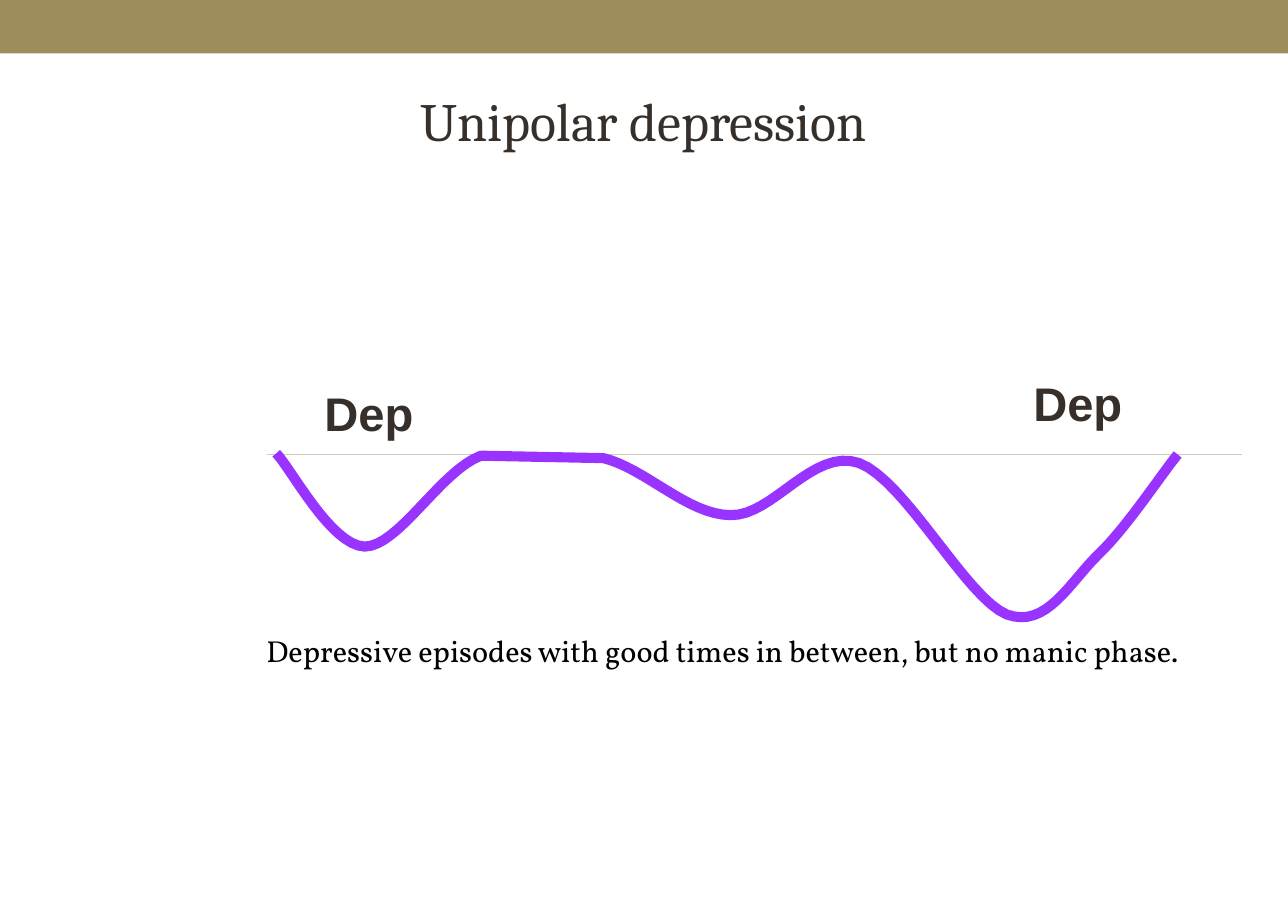
from pptx import Presentation
from pptx.dml.color import RGBColor
from pptx.enum.shapes import MSO_CONNECTOR, MSO_SHAPE
from pptx.enum.text import MSO_ANCHOR, PP_ALIGN
from pptx.oxml.ns import qn
from pptx.util import Inches, Pt
from lxml.etree import SubElement

COLORS = {"band": "9E8E5C", "ink": "37302A", "axis": "D0CCB9",
          "mood": "9933FF", "black": "000000"}
TITLE = "Unipolar depression"
HEAD = {"size": Pt(32), "name": "Cambria", "bold": False}
MARK = {"size": Pt(28), "name": "Arial", "bold": True}
NOTE = {"size": Pt(18), "name": "Vollkorn", "bold": False}
LABELS = [
    ("Dep", (2.58, 3.12, 1.06, 0.57), MARK, "ink"),
    ("Dep", (8.43, 3.04, 1.06, 0.57), MARK, "ink"),
    ("Depressive episodes with good times in between, but no manic phase.",
     (2.1, 5.17, 8.45, 0.4), NOTE, "black"),
]
START = (2.28, 3.74)
CURVE = [
    [(2.4, 3.86), (2.73, 4.5), (3.01, 4.51)],
    [(3.29, 4.51), (3.64, 3.88), (3.97, 3.76)],
    [(4.98, 3.78)],
    [(5.32, 3.86), (5.68, 4.25), (6.03, 4.25)],
    [(6.38, 4.26), (6.71, 3.69), (7.09, 3.82)],
    [(7.47, 3.96), (7.98, 4.94), (8.31, 5.07)],
    [(8.64, 5.19), (8.83, 4.8), (9.07, 4.57)],
    [(9.3, 4.35), (9.58, 3.92), (9.72, 3.75)],
]
STEPS = 16


def color(key):
    return RGBColor.from_string(COLORS[key])


def box(*sizes):
    return [Inches(size) for size in sizes]


def write(frame, text, style, key):
    frame.text = text
    font = frame.paragraphs[0].runs[0].font
    for name, value in style.items():
        setattr(font, name, value)
    font.color.rgb = color(key)


def bend(a, b, c, d, t):
    u = 1 - t
    return [u**3 * p + 3 * u * u * t * q + 3 * u * t * t * r + t**3 * s
            for p, q, r, s in zip(a, b, c, d)]


def trace():
    pen, dots = START, []
    for part in CURVE:
        if len(part) == 1:
            dots.append(part[0])
        else:
            dots += [bend(pen, *part, i / STEPS) for i in range(1, STEPS + 1)]
        pen = part[-1]
    return dots


def main():
    deck = Presentation()
    deck.slide_width, deck.slide_height = box(10.63, 7.5)
    slide = deck.slides.add_slide(deck.slide_layouts[5])
    shapes = slide.shapes

    band = shapes.add_shape(MSO_SHAPE.RECTANGLE, *box(0, 0, 10.63, 0.44))
    band.shadow.inherit = False
    band.fill.solid()
    band.fill.fore_color.rgb = color("band")
    band.line.fill.background()

    title = shapes.title
    title.left, title.top, title.width, title.height = box(0.53, 0.36, 9.57, 1.26)
    write(title.text_frame, TITLE, HEAD, "ink")
    title.text_frame.vertical_anchor = MSO_ANCHOR.MIDDLE
    title.text_frame.paragraphs[0].alignment = PP_ALIGN.CENTER

    axis = shapes.add_connector(MSO_CONNECTOR.STRAIGHT, *box(2.2, 3.75, 10.25, 3.75))
    axis.line.color.rgb = color("axis")
    axis.line.width = Pt(0.75)
    SubElement(axis.element.spPr, qn("a:effectLst"))

    path = shapes.build_freeform(*box(*START))
    path.add_line_segments([box(*dot) for dot in trace()], close=False)
    mood = path.convert_to_shape()
    mood.shadow.inherit = False
    mood.fill.background()
    mood.line.color.rgb = color("mood")
    mood.line.width = Pt(6)

    for text, place, style, key in LABELS:
        label = shapes.add_textbox(*box(*place))
        label.text_frame.word_wrap = True
        write(label.text_frame, text, style, key)

    deck.save("out.pptx")


if __name__ == "__main__":
    main()
